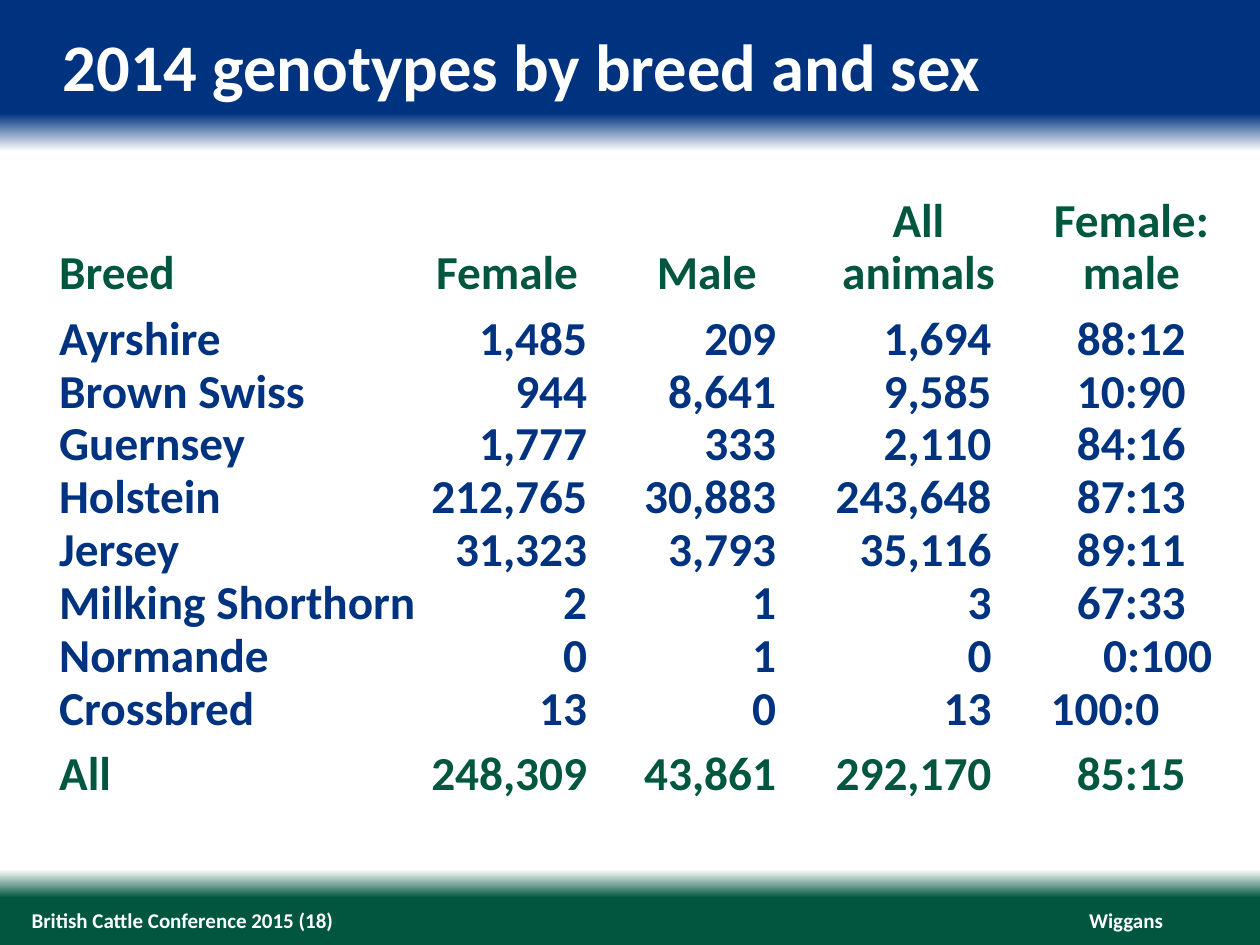
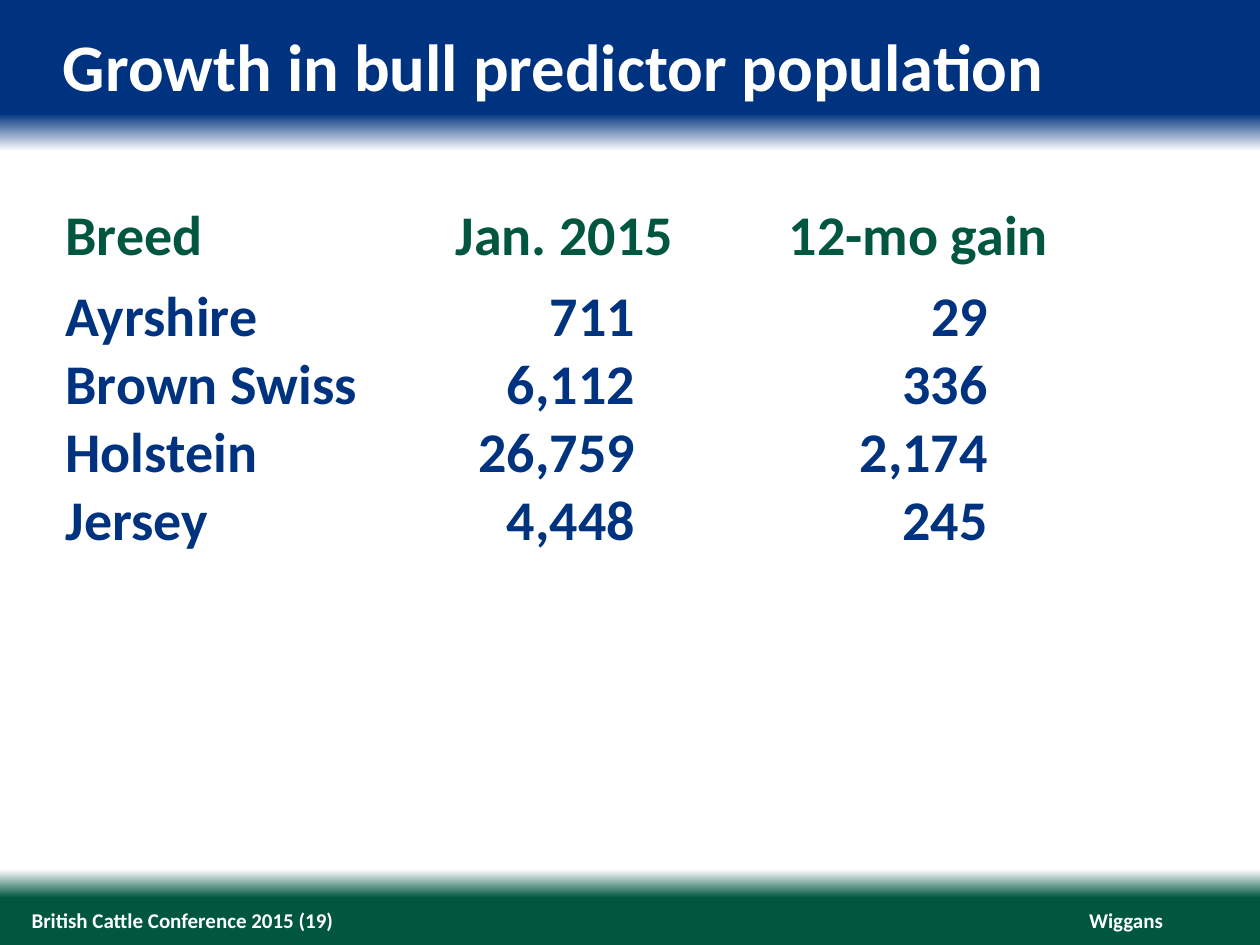
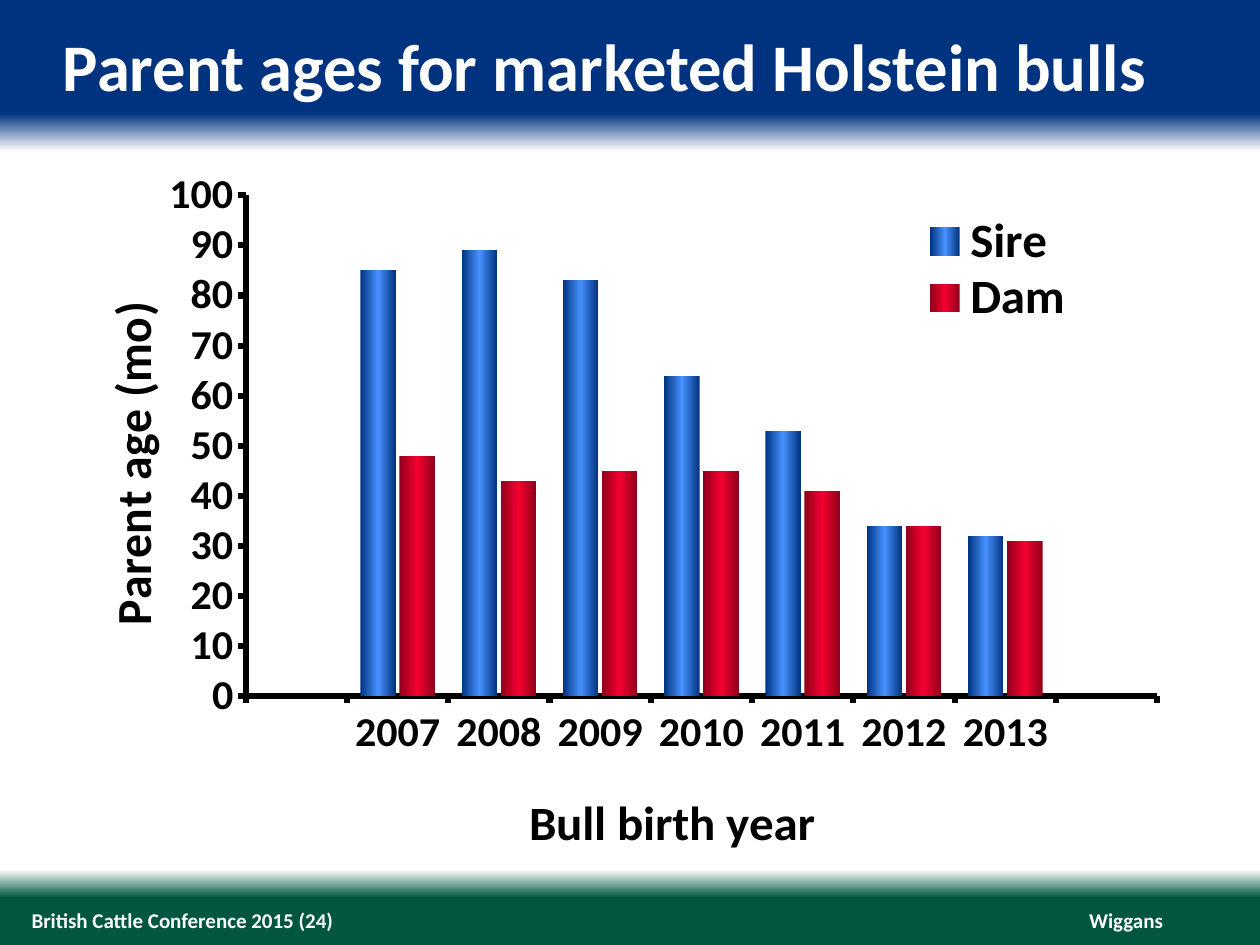
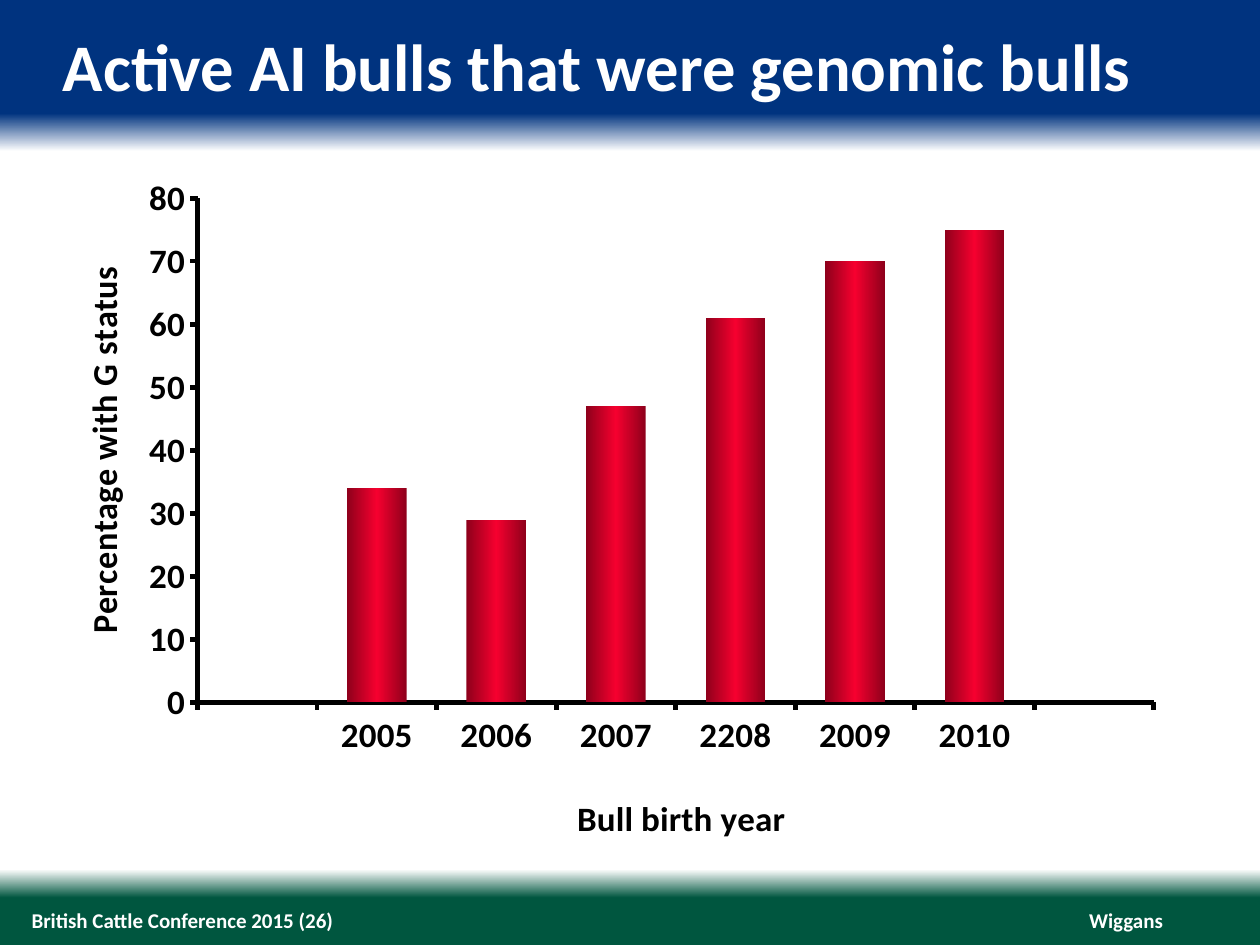
from dataclasses import dataclass

from lxml.etree import SubElement
from pptx import Presentation
from pptx.chart.data import CategoryChartData
from pptx.dml.color import RGBColor
from pptx.enum.chart import XL_CHART_TYPE, XL_LEGEND_POSITION, XL_TICK_MARK
from pptx.enum.text import MSO_ANCHOR, MSO_AUTO_SIZE, PP_ALIGN
from pptx.oxml.ns import qn
from pptx.util import Inches, Pt


@dataclass(frozen=True)
class Theme:
    font: str = "Calibri"
    blue: str = "00337F"
    green: str = "00563F"
    white: str = "FFFFFF"
    black: str = "000000"
    title_size: int = 38
    footer_size: int = 12
    breed_size: int = 27
    growth_size: int = 32
    backdrop: tuple = ((0, "00337F"), (12, "00337F"), (16, "FFFFFF"),
                       (92, "FFFFFF"), (95, "00563F"), (100, "00563F"))
    blue_bar: tuple = ((0, "00337F"), (50, "4791FF"), (100, "00337F"))
    red_bar: tuple = ((0, "8E001B"), (50, "F6002F"), (100, "8E001B"))
    plain_table: str = "{2D5ABB26-0587-4C30-8999-92F81FD0307C}"


@dataclass(frozen=True)
class ColumnChart:
    place: tuple
    years: tuple
    series: tuple
    value_title: str
    maximum: int
    gap: int
    overlap: int
    label_size: int
    title_size: int
    line_width: float
    plot_layout: tuple
    category_title_layout: tuple
    value_title_layout: tuple
    legend_layout: tuple = ()


THEME = Theme()
LEFT, CENTER, RIGHT = PP_ALIGN.LEFT, PP_ALIGN.CENTER, PP_ALIGN.RIGHT

BREED_HEADER = ("Breed", "Female", "Male", "All\nanimals", "Female:\nmale")
BREED_ROWS = (
    ("Ayrshire", "1,485", "209", "1,694", "88:12"),
    ("Brown Swiss", "944", "8,641", "9,585", "10:90"),
    ("Guernsey", "1,777", "333", "2,110", "84:16"),
    ("Holstein", "212,765", "30,883", "243,648", "87:13"),
    ("Jersey", "31,323", "3,793", "35,116", "89:11"),
    ("Milking Shorthorn", "2", "1", "3", "67:33"),
    ("Normande", "0", "1", "0", "0:100"),
    ("Crossbred", "13", "0", "13", "100:0"),
)
BREED_TOTAL = ("All", "248,309", "43,861", "292,170", "85:15")

GROWTH_HEADER = ("Breed", "Jan. 2015", "12-mo gain")
GROWTH_ROWS = (
    ("Ayrshire", "711", "29"),
    ("Brown Swiss", "6,112", "336"),
    ("Holstein", "26,759", "2,174"),
    ("Jersey", "4,448", "245"),
)

PARENT_AGES = ColumnChart(
    place=(0.34, 0.87, 9.47, 6.02),
    years=("", "2007", "2008", "2009", "2010", "2011", "2012", "2013", ""),
    series=(("Sire", (None, 85, 89, 83, 64, 53, 34, 32, None), THEME.blue_bar),
            ("Dam", (None, 48, 43, 45, 45, 41, 34, 31, None), THEME.red_bar)),
    value_title="Parent age (mo)", maximum=100, gap=75, overlap=-10,
    label_size=24, title_size=28, line_width=3.5,
    plot_layout=(0.17, 0.116, 0.764, 0.678),
    category_title_layout=(0.4, 0.91), value_title_layout=(0.04, 0.26),
    legend_layout=(0.73, 0.14, 0.14, 0.15),
)
GENOMIC_BULLS = ColumnChart(
    place=(0.39, 1.34, 9.2, 5.41),
    years=("", "2005", "2006", "2007", "2208", "2009", "2010", ""),
    series=(("Series 1", (None, 34, 29, 47, 61, 70, 75, None), THEME.red_bar),),
    value_title="Percentage with G status", maximum=80, gap=100, overlap=0,
    label_size=20, title_size=20, line_width=2.75,
    plot_layout=(0.128, 0.044, 0.825, 0.758),
    category_title_layout=(0.45, 0.93), value_title_layout=(0.02, 0.15),
)


def style_font(font, size, color):
    font.name = THEME.font
    font.size = Pt(size)
    font.bold = True
    font.color.rgb = RGBColor.from_string(color)


def write_text(frame, text, size, color, align=LEFT, line_height=None):
    for index, line in enumerate(text.split("\n")):
        para = frame.paragraphs[0] if index == 0 else frame.add_paragraph()
        para.alignment = align
        if line_height:
            para.line_spacing = Pt(line_height)
        span = para.add_run()
        span.text = line
        style_font(span.font, size, color)


def set_margins(target, left=0, top=0, right=0, bottom=0):
    target.margin_left, target.margin_top = Inches(left), Inches(top)
    target.margin_right, target.margin_bottom = Inches(right), Inches(bottom)


def fill_gradient(fill, parent, stops, angle):
    fill.gradient()
    fill.gradient_angle = angle
    stop_list = parent.find(".//" + qn("a:gsLst"))
    for stop in list(stop_list):
        stop_list.remove(stop)
    for position, color in stops:
        stop = SubElement(stop_list, qn("a:gs"), pos=str(position * 1000))
        SubElement(stop, qn("a:srgbClr"), val=color)


def add_label(page, place, text, size, align=LEFT, anchor=MSO_ANCHOR.TOP, wrap=True):
    box = page.shapes.add_textbox(*map(Inches, place))
    frame = box.text_frame
    frame.word_wrap = wrap
    frame.auto_size = MSO_AUTO_SIZE.SHAPE_TO_FIT_TEXT
    frame.vertical_anchor = anchor
    set_margins(frame)
    write_text(frame, text, size, THEME.white, align)


def add_page(deck, title, number):
    page = deck.slides.add_slide(deck.slide_layouts[6])
    add_label(page, (8.64, 7.2, 0.59, 0.2), "Wiggans", THEME.footer_size,
              RIGHT, MSO_ANCHOR.MIDDLE, wrap=False)
    add_label(page, (0.25, 7.2, 7.42, 0.2), f"British Cattle Conference 2015 ({number})",
              THEME.footer_size, anchor=MSO_ANCHOR.MIDDLE)
    add_label(page, (0.5, 0.2, 9, 0.64), title, THEME.title_size)
    return page


def add_plain_table(page, left, top, widths, heights):
    frame = page.shapes.add_table(len(heights), len(widths), Inches(left), Inches(top),
                                  Inches(sum(widths)), Inches(sum(heights)))
    table = frame.table
    table.first_row = table.horz_banding = False
    frame.element.find(".//" + qn("a:tableStyleId")).text = THEME.plain_table
    for column, width in zip(table.columns, widths):
        column.width = Inches(width)
    for row, height in zip(table.rows, heights):
        row.height = Inches(height)
    return table


def fill_row(table, row, texts, aligns, sides, size, color, top=0, line_height=None):
    for column, (text, align, (left, right)) in enumerate(zip(texts, aligns, sides)):
        cell = table.cell(row, column)
        cell.fill.background()
        cell.vertical_anchor = MSO_ANCHOR.BOTTOM
        set_margins(cell, left, top, right)
        write_text(cell.text_frame, text, size, color, align, line_height)


def add_breed_table(page):
    line, gap = 0.42, 0.1
    heights = [2 * line, line + gap] + [line] * 7 + [line + gap]
    table = add_plain_table(page, 0.4, 1.56, (2.99, 1.27, 1.65, 1.96, 1.42), heights)
    edge = (0.07, 0.07)
    header_sides = (edge, (0, 0), (0.25, 0), (0, 0), edge)
    sides = (edge, (0, 0), (0, 0.15), (0, 0.4), edge)
    ratio_aligns = {"0:100": RIGHT, "100:0": LEFT}
    fill_row(table, 0, BREED_HEADER, (LEFT,) + (CENTER,) * 4, header_sides,
             THEME.breed_size, THEME.green, line_height=30)
    for row, texts in enumerate(BREED_ROWS + (BREED_TOTAL,), start=1):
        aligns = (LEFT, RIGHT, RIGHT, RIGHT, ratio_aligns.get(texts[-1], CENTER))
        is_total = texts is BREED_TOTAL
        fill_row(table, row, texts, aligns, sides, THEME.breed_size,
                 THEME.green if is_total else THEME.blue,
                 top=gap if row == 1 or is_total else 0, line_height=30)


def add_growth_table(page):
    table = add_plain_table(page, 0.52, 1.73, (2.35, 3.37, 2.1), (0.42, 0.64, 0.54, 0.54, 0.54))
    fill_row(table, 0, GROWTH_HEADER, (LEFT, CENTER, CENTER), ((0, 0), (0, 0.15), (0, 0)),
             THEME.growth_size, THEME.green, line_height=30)
    for row, texts in enumerate(GROWTH_ROWS, start=1):
        fill_row(table, row, texts, (LEFT, RIGHT, RIGHT), ((0, 0), (0, 1.2), (0, 0.5)),
                 THEME.growth_size, THEME.blue, top=0.1 if row == 1 else 0)


def set_layout(parent, fractions, inner=False):
    for old in parent.findall(qn("c:layout")):
        parent.remove(old)
    leading = [child for child in parent if child.tag in (qn("c:tx"), qn("c:legendPos"))]
    layout = parent.makeelement(qn("c:layout"))
    parent.insert(len(leading), layout)
    manual = SubElement(layout, qn("c:manualLayout"))
    if inner:
        SubElement(manual, qn("c:layoutTarget"), val="inner")
    for name in ("xMode", "yMode"):
        SubElement(manual, qn(f"c:{name}"), val="edge")
    for name, fraction in zip("xywh", fractions):
        SubElement(manual, qn(f"c:{name}"), val=str(fraction))


def style_axis(axis, title, layout, design):
    axis.has_major_gridlines = False
    axis.major_tick_mark = XL_TICK_MARK.OUTSIDE
    axis.minor_tick_mark = XL_TICK_MARK.NONE
    axis.format.line.width = Pt(design.line_width)
    axis.format.line.color.rgb = RGBColor.from_string(THEME.black)
    style_font(axis.tick_labels.font, design.label_size, THEME.black)
    write_text(axis.axis_title.text_frame, title, design.title_size, THEME.black, CENTER)
    set_layout(axis.axis_title.element, layout)


def add_column_chart(page, design):
    data = CategoryChartData()
    data.categories = design.years
    for name, values, _ in design.series:
        data.add_series(name, values)
    chart = page.shapes.add_chart(XL_CHART_TYPE.COLUMN_CLUSTERED,
                                  *map(Inches, design.place), data).chart
    style_font(chart.font, design.label_size, THEME.black)
    chart.has_title = False
    plot = chart.plots[0]
    plot.vary_by_categories = False
    plot.gap_width, plot.overlap = design.gap, design.overlap
    for series, (_, _, stops) in zip(plot.series, design.series):
        fill_gradient(series.format.fill, series._element, stops, 0)

    style_axis(chart.category_axis, "Bull birth year", design.category_title_layout, design)
    style_axis(chart.value_axis, design.value_title, design.value_title_layout, design)
    chart.value_axis.minimum_scale = 0
    chart.value_axis.maximum_scale = design.maximum
    chart.value_axis.major_unit = 10
    title_body = chart.value_axis.axis_title.element.find(".//" + qn("a:bodyPr"))
    title_body.set("rot", "-5400000")
    title_body.set("vert", "horz")
    set_layout(chart.element.find(".//" + qn("c:plotArea")), design.plot_layout, inner=True)

    chart.has_legend = bool(design.legend_layout)
    if chart.has_legend:
        chart.legend.position = XL_LEGEND_POSITION.RIGHT
        chart.legend.include_in_layout = False
        style_font(chart.legend.font, design.title_size, THEME.black)
        set_layout(chart.element.find(".//" + qn("c:legend")), design.legend_layout)


def main():
    deck = Presentation()
    deck.slide_width, deck.slide_height = Inches(10), Inches(7.5)
    master = deck.slide_master
    fill_gradient(master.background.fill, master.element, THEME.backdrop, 270)

    add_breed_table(add_page(deck, "2014 genotypes by breed and sex", 18))
    add_growth_table(add_page(deck, "Growth in bull predictor population", 19))
    add_column_chart(add_page(deck, "Parent ages for marketed Holstein bulls", 24), PARENT_AGES)
    add_column_chart(add_page(deck, "Active AI bulls that were genomic bulls", 26), GENOMIC_BULLS)
    deck.save("out.pptx")


if __name__ == "__main__":
    main()
